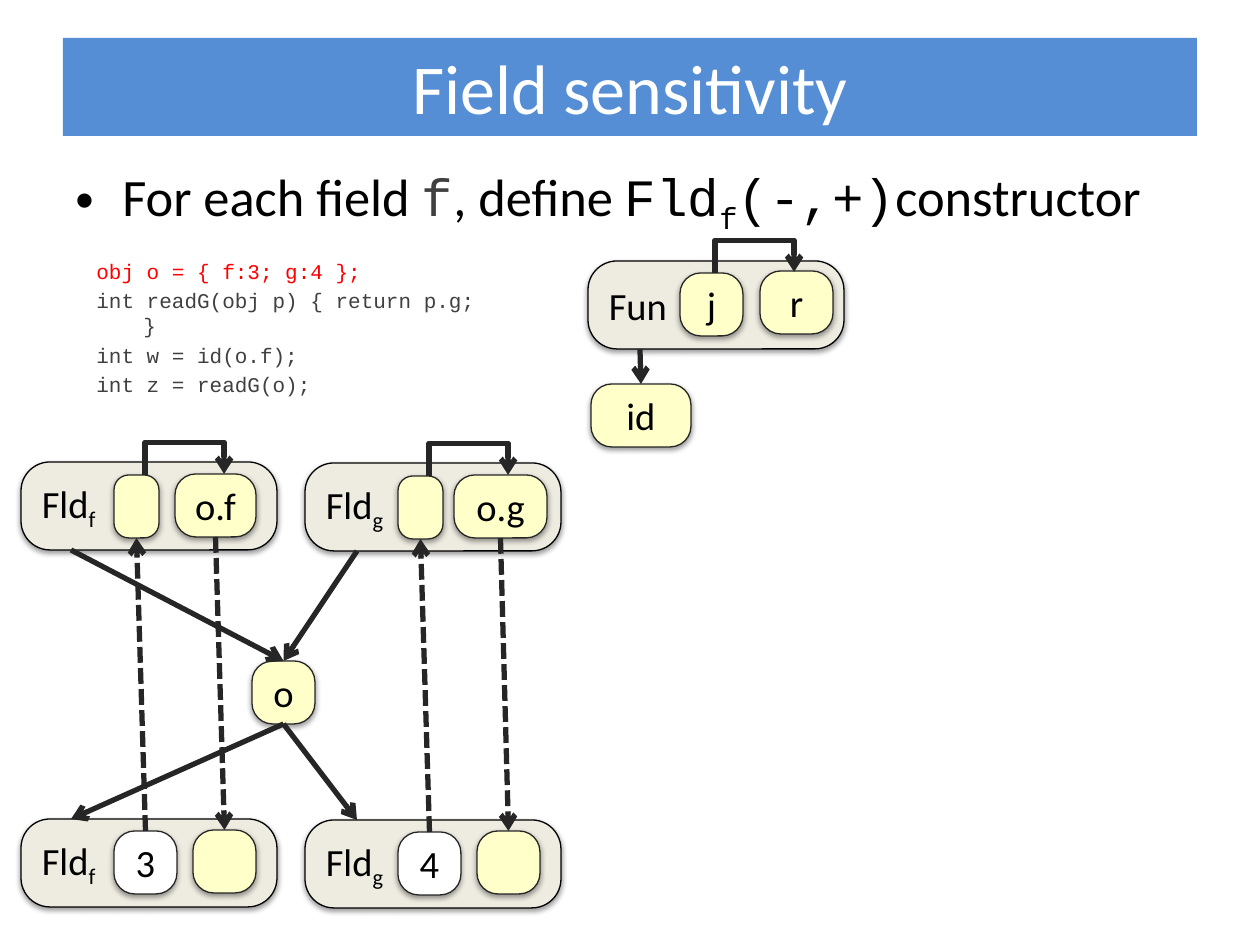
from lxml import etree
from pptx import Presentation
from pptx.dml.color import RGBColor
from pptx.enum.dml import MSO_LINE
from pptx.enum.shapes import MSO_CONNECTOR, MSO_SHAPE
from pptx.enum.text import MSO_ANCHOR, PP_ALIGN
from pptx.oxml.ns import qn
from pptx.util import Pt

RECTANGLE, ROUNDED = MSO_SHAPE.RECTANGLE, MSO_SHAPE.ROUNDED_RECTANGLE
STRAIGHT, ELBOW = MSO_CONNECTOR.STRAIGHT, MSO_CONNECTOR.ELBOW
SOLID, DASHED = MSO_LINE.SOLID, MSO_LINE.SQUARE_DOT
LEFT, CENTER, MIDDLE = PP_ALIGN.LEFT, PP_ALIGN.CENTER, MSO_ANCHOR.MIDDLE
TOP, BOTTOM = 0, 2
PX = 914400 / 126
SANS, MONO = "Calibri", "Courier New"
COLORS = {
    "title": "558ED5", "box": "EEECE1", "node": "FFFFCA", "white": "FFFFFF",
    "black": "000000", "dark": "262626", "gray": "404040", "red": "FF0000",
}
HANGING = {"marL": str(round(47 * PX)), "indent": str(round(-47 * PX))}

presentation = Presentation()
presentation.slide_width = round(1260 * PX)
presentation.slide_height = round(945 * PX)
slide = presentation.slides.add_slide(presentation.slide_layouts[6])
shapes = slide.shapes


def add_run(paragraph, text, color="black", size=22, name=SANS, subscript=False):
    run = paragraph.add_run()
    run.text = text
    for attribute, value in {"name": name, "size": Pt(size)}.items():
        setattr(run.font, attribute, value)
    run.font.color.rgb = RGBColor.from_string(COLORS[color])
    if subscript:
        run.font._element.set("baseline", "-25000")


def add_box(frame, text="", fill="node", line="dark", align=CENTER, subscript=""):
    """Add a shadowed rounded box; frame is left, top, width, height in px."""
    shape = shapes.add_shape(ROUNDED, *(round(length * PX) for length in frame))
    shape.adjustments[0] = 0.33
    shape.fill.solid()
    shape.fill.fore_color.rgb = RGBColor.from_string(COLORS[fill])
    shape.line.color.rgb = RGBColor.from_string(COLORS[line])
    shape.line.width = Pt(0.75)
    shape.shadow.inherit = False
    shadow = etree.SubElement(
        shape._element.spPr.find(qn("a:effectLst")), qn("a:outerShdw"),
        blurRad=str(Pt(3.1)), dist=str(Pt(1.6)), dir="5400000", rotWithShape="0")
    color = etree.SubElement(shadow, qn("a:srgbClr"), val=COLORS["black"])
    etree.SubElement(color, qn("a:alpha"), val="38000")
    shape.text_frame.vertical_anchor = MIDDLE
    shape.text_frame.word_wrap = align == LEFT
    paragraph = shape.text_frame.paragraphs[0]
    paragraph.alignment = align
    if text:
        add_run(paragraph, text)
    if subscript:
        add_run(paragraph, subscript, subscript=True)
    return shape


# Title
title = shapes.add_shape(
    RECTANGLE, *(round(length * PX) for length in (63, 38, 1134, 98)))
title.shadow.inherit = False
title.fill.solid()
title.fill.fore_color.rgb = RGBColor.from_string(COLORS["title"])
title.line.fill.background()
title.text_frame.vertical_anchor = MIDDLE
title.text_frame.paragraphs[0].alignment = CENTER
add_run(title.text_frame.paragraphs[0], "Field sensitivity", "white", 40)

# Bullet and code: frame, text size, bulleted, lines of (text, color, font, subscript)
texts = [
    ((63, 158, 1134, 94), 30, True, [[
        ("For each field ", "black", SANS, False),
        ("f", "gray", MONO, False),
        (", define ", "black", SANS, False),
        ("Fld", "black", MONO, False),
        ("f", "black", MONO, True),
        ("(-,+)", "black", MONO, False),
        ("constructor", "black", SANS, False),
    ]]),
    ((84, 252, 410, 160), 12, False, [
        [("obj o = { f:3; g:4 };", "red", MONO, False)],
        [("int readG(obj p) { return p.g; }", "gray", MONO, False)],
        [("int w = id(o.f);", "gray", MONO, False)],
        [("int z = readG(o);", "gray", MONO, False)],
    ]),
]
for frame, size, bulleted, lines in texts:
    text_frame = shapes.add_textbox(*(round(length * PX) for length in frame)).text_frame
    text_frame.word_wrap = True
    for index, line in enumerate(lines):
        paragraph = text_frame.add_paragraph() if index else text_frame.paragraphs[0]
        paragraph.space_before = Pt(size * 0.2)
        properties = paragraph._p.get_or_add_pPr()
        for attribute, value in HANGING.items():
            properties.set(attribute, value)
        if bulleted:
            etree.SubElement(properties, qn("a:buFont"), typeface="Arial")
            etree.SubElement(properties, qn("a:buChar"), char="•")
        for text, color, name, subscript in line:
            add_run(paragraph, text, color, size, name, subscript)

# Function constructor; an arrow end is (x, y) in px or (shape, side)
add_box((588, 261, 256, 88), "Fun", "box", "black", LEFT)
add_box((680, 273, 63, 63), "j")
add_box((760, 271, 73, 63), "r")
identity = add_box((591, 384, 100, 63), "id")
arrows = [((640, 349), (identity, TOP), SOLID)]
bends = [(715, 273)]

# Field constructors above and below the object
target = add_box((252, 661, 63, 63), "o")
fields = [("f", "3", 21, 462, 154, 81, 50), ("g", "4", 305, 463, 149, 93, 52)]
for field, value, left, top, reader_offset, reader_width, joint in fields:
    low = top + 357
    for box_top in (top, low):
        add_box((left, box_top, 256, 88), "Fld", "box", "black", LEFT, field)
    writer = add_box((left + 93, top + 13, 45, 63))
    reader = add_box((left + reader_offset, top + 12, reader_width, 63), f"o.{field}")
    stored = add_box((left + 93, low + 12, 63, 63), value, "white")
    result = add_box((left + 172, low + 11, 63, 63))
    arrows += [
        ((left + joint, top + 88), (target, TOP), SOLID),
        ((target, BOTTOM), (left + joint, low), SOLID),
        ((stored, TOP), (writer, BOTTOM), DASHED),
        ((reader, BOTTOM), (result, TOP), DASHED),
    ]
    bends.append((left + 124, top + 13))

connectors = []
for begin, end, dash in arrows:
    points = [(0, 0) if not isinstance(first, int) else (first, second)
              for first, second in (begin, end)]
    connector = shapes.add_connector(
        STRAIGHT, *(round(length * PX) for point in points for length in point))
    for (first, second), join in ((begin, connector.begin_connect),
                                  (end, connector.end_connect)):
        if not isinstance(first, int):
            join(first, second)
    connectors.append((connector, dash))

# Bent arrows: a flat elbow turned by 90 degrees, rising 33 px, spanning 79 px
RISE, SPAN, DROP = 33, 79, 1
for x, y in bends:
    middle_x, middle_y = x + SPAN / 2, y - DROP / 2
    corners = (middle_x + DROP / 2, middle_y + SPAN / 2,
               middle_x - DROP / 2, middle_y - SPAN / 2)
    connector = shapes.add_connector(ELBOW, *(round(length * PX) for length in corners))
    properties = connector._element.spPr
    properties.find(qn("a:xfrm")).set("rot", "5400000")
    etree.SubElement(properties.find(qn("a:prstGeom")).find(qn("a:avLst")), qn("a:gd"),
                     name="adj1", fmla=f"val {RISE * 100000 // DROP}")
    connectors.append((connector, SOLID))

for connector, dash in connectors:
    connector.line.color.rgb = RGBColor.from_string(COLORS["dark"])
    for attribute, value in {"width": Pt(3), "dash_style": dash}.items():
        setattr(connector.line, attribute, value)
    properties = connector._element.spPr
    etree.SubElement(properties.find(qn("a:ln")), qn("a:tailEnd"), type="arrow")
    etree.SubElement(properties, qn("a:effectLst"))

presentation.save("out.pptx")
